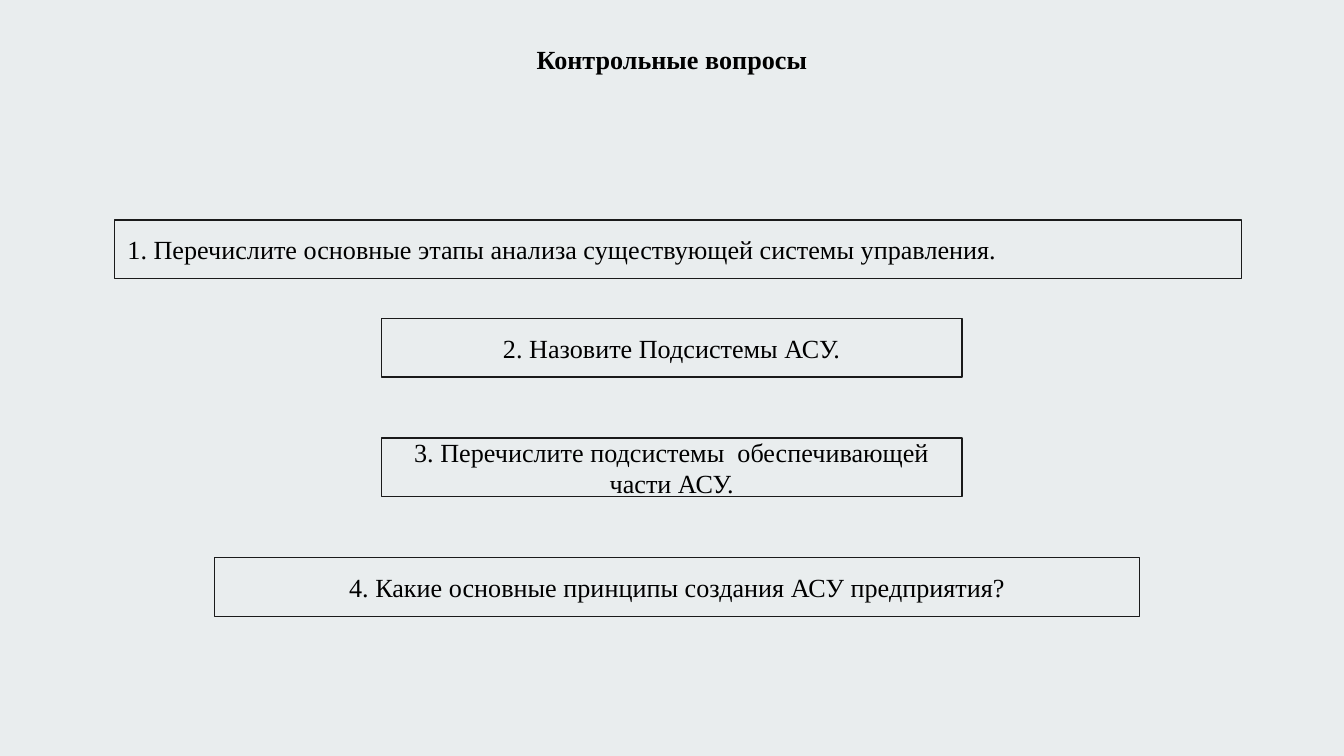
import pptx
import pptx.util
import pptx.dml.color
import pptx.enum.shapes
import pptx.enum.text

Cm, Pt = pptx.util.Cm, pptx.util.Pt
Color = pptx.dml.color.RGBColor
Align = pptx.enum.text.PP_ALIGN
Anchor = pptx.enum.text.MSO_ANCHOR

PAPER = Color(0xE9, 0xED, 0xEE)
EDGE = Color(0x1A, 0x1A, 0x1A)
INK = Color(0, 0, 0)

TITLE = "Контрольные вопросы"
# text, left, top, width (cm), alignment
ASKS = [
    ("1. Перечислите основные этапы анализа существующей системы управления.",
     2.16, 4.16, 21.31, Align.LEFT),
    ("2. Назовите Подсистемы АСУ.", 7.21, 6.02, 10.97, Align.CENTER),
    ("3. Перечислите подсистемы  обеспечивающей части АСУ.",
     7.21, 8.28, 10.97, Align.CENTER),
    ("4. Какие основные принципы создания АСУ предприятия?",
     4.06, 10.54, 17.48, Align.CENTER),
]
HIGH = 1.11
PAD = Cm(0.25)


def write(shape, text, align=Align.CENTER, anchor=Anchor.MIDDLE, bold=False):
    frame = shape.text_frame
    frame.word_wrap = True
    frame.vertical_anchor = anchor
    frame.margin_left = frame.margin_right = PAD
    frame.margin_top = frame.margin_bottom = PAD
    para = frame.paragraphs[0]
    para.alignment = align
    run = para.add_run()
    run.text = text
    run.font.name = "Times New Roman"
    run.font.size = Pt(14)
    run.font.bold = bold
    run.font.color.rgb = INK


deck = pptx.Presentation()
deck.slide_width, deck.slide_height = Cm(25.4), Cm(14.29)
slide = deck.slides.add_slide(deck.slide_layouts[6])
slide.background.fill.solid()
slide.background.fill.fore_color.rgb = PAPER

title = slide.shapes.add_textbox(Cm(8.17), Cm(0.58), Cm(9.06), Cm(HIGH))
write(title, TITLE, anchor=Anchor.TOP, bold=True)
title.text_frame.auto_size = pptx.enum.text.MSO_AUTO_SIZE.SHAPE_TO_FIT_TEXT

for text, left, top, width, align in ASKS:
    box = slide.shapes.add_shape(
        pptx.enum.shapes.MSO_SHAPE.RECTANGLE,
        Cm(left), Cm(top), Cm(width), Cm(HIGH))
    box.shadow.inherit = False
    box.fill.solid()
    box.fill.fore_color.rgb = PAPER
    box.line.color.rgb = EDGE
    box.line.width = Pt(0.75)
    write(box, text, align=align)

deck.save("out.pptx")
